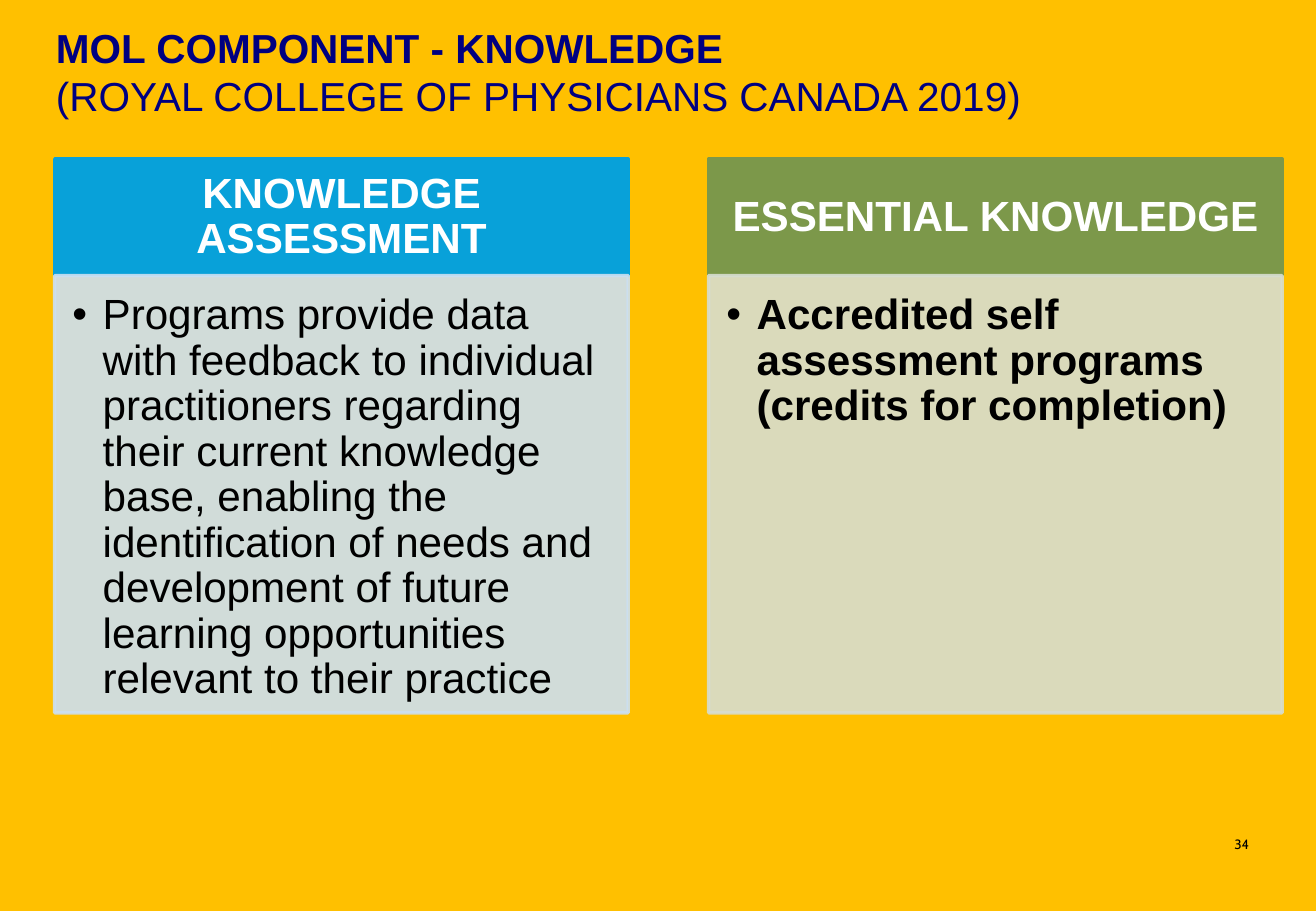
from dataclasses import dataclass

from lxml.etree import SubElement
from pptx import Presentation
from pptx.dml.color import RGBColor
from pptx.enum.shapes import MSO_SHAPE as Preset
from pptx.enum.text import MSO_ANCHOR as Anchor, MSO_AUTO_SIZE as AutoSize, PP_ALIGN as Align
from pptx.oxml.ns import qn
from pptx.util import Pt


@dataclass(frozen=True)
class Theme:
    """Colours, fonts and type sizes of the slide."""
    background: str = "FFC000"
    navy: str = "000080"
    blue: str = "08A1D9"
    pale_blue: str = "CCE0F1"
    green: str = "7C984A"
    pale_green: str = "D7DDD0"
    white: str = "FFFFFF"
    black: str = "000000"
    main_font: str = "Arial"
    number_font: str = "Cabin"
    title_size: float = 24
    panel_size: float = 25
    number_size: float = 8


THEME = Theme()


def add_run(paragraph, text, size, color, bold=False, font=THEME.main_font):
    """Append one formatted run."""
    run = paragraph.add_run()
    run.text = text
    run.font.name = font
    run.font.size = Pt(size)
    run.font.bold = bold
    run.font.color.rgb = RGBColor.from_string(color)


def set_frame(frame, insets, anchor):
    """Set wrapping, anchor and insets (left, top, right, bottom)."""
    frame.word_wrap = True
    frame.auto_size = AutoSize.NONE
    frame.vertical_anchor = anchor
    (frame.margin_left, frame.margin_top,
     frame.margin_right, frame.margin_bottom) = map(Pt, insets)


def add_block(slide, box, color, alpha=100):
    """Add a rectangle with matching fill and outline."""
    block = slide.shapes.add_shape(Preset.RECTANGLE, *map(Pt, box))
    block.shadow.inherit = False
    block.line.width = Pt(2)
    block.line.fill.solid()
    block.fill.solid()
    for fill in (block.fill, block.line.fill):
        fill.fore_color.rgb = RGBColor.from_string(color)
    if alpha < 100:
        for rgb in block._element.spPr.iter(qn("a:srgbClr")):
            SubElement(rgb, qn("a:alpha"), val=str(alpha * 1000))
    return block


def add_title(slide, box, heading, source):
    """Fill the title placeholder with a bold heading and its source."""
    title = slide.shapes.title
    title.left, title.top, title.width, title.height = map(Pt, box)
    set_frame(title.text_frame, (7.2, 5.3, 7.2, 3.6), Anchor.TOP)
    paragraph = title.text_frame.paragraphs[0]
    paragraph.alignment = Align.LEFT
    paragraph.line_spacing = Pt(28.5)
    add_run(paragraph, heading, THEME.title_size, THEME.navy, bold=True)
    paragraph.add_line_break()
    add_run(paragraph, source, THEME.title_size, THEME.navy)


def add_panel(slide, box, heading, detail, colors, bold_detail):
    """Add a coloured heading above a tinted block with one bullet."""
    left, top, width, height = box
    heading_height = 69.1
    head_color, body_color = colors

    head = add_block(slide, (left, top, width, heading_height), head_color)
    set_frame(head.text_frame, (14, 8, 14, 8), Anchor.MIDDLE)
    paragraph = head.text_frame.paragraphs[0]
    paragraph.alignment = Align.CENTER
    paragraph.line_spacing = 0.9
    add_run(paragraph, heading, THEME.panel_size, THEME.white, bold=True)

    body_box = (left, top + heading_height, width, height - heading_height)
    body = add_block(slide, body_box, body_color, alpha=90)
    set_frame(body.text_frame, (10.5, 10.5, 14, 16), Anchor.TOP)
    paragraph = body.text_frame.paragraphs[0]
    properties = paragraph._p.get_or_add_pPr()
    properties.set("marL", str(Pt(18)))
    properties.set("indent", str(Pt(-18)))
    SubElement(properties, qn("a:buFont"), typeface=THEME.main_font)
    SubElement(properties, qn("a:buChar"), char="•")
    paragraph.alignment = Align.LEFT
    paragraph.line_spacing = 0.9
    add_run(paragraph, detail, THEME.panel_size, THEME.black, bold_detail)


def add_page_number(slide, box, number):
    """Add the page number in an unfilled ellipse."""
    badge = slide.shapes.add_shape(Preset.OVAL, *map(Pt, box))
    badge.shadow.inherit = False
    badge.fill.background()
    badge.line.fill.background()
    set_frame(badge.text_frame, (7.2, 3.6, 7.2, 3.6), Anchor.TOP)
    paragraph = badge.text_frame.paragraphs[0]
    paragraph.alignment = Align.LEFT
    add_run(paragraph, number, THEME.number_size, THEME.black, font=THEME.number_font)


def main():
    """Build and save the slide."""
    deck = Presentation()
    deck.slide_width, deck.slide_height = Pt(780), Pt(540)
    slide = deck.slides.add_slide(deck.slide_layouts[5])
    slide.background.fill.solid()
    slide.background.fill.fore_color.rgb = RGBColor.from_string(THEME.background)

    add_title(slide, (25.9, 8.6, 641.5, 72.7), "MOL COMPONENT - KNOWLEDGE",
              "(ROYAL COLLEGE OF PHYSICIANS CANADA 2019)")
    panels = (
        ("KNOWLEDGE ASSESSMENT",
         "Programs provide data with feedback to individual practitioners regarding "
         "their current knowledge base, enabling the identification of needs and "
         "development of future learning opportunities relevant to their practice",
         (THEME.blue, THEME.pale_blue), False),
        ("ESSENTIAL KNOWLEDGE",
         "Accredited self assessment programs (credits for completion)",
         (THEME.green, THEME.pale_green), True),
    )
    panel_width, gap = 340, 47.6
    for index, panel in enumerate(panels):
        left = 32.4 + index * (panel_width + gap)
        add_panel(slide, (left, 94.3, panel_width, 328.3), *panel)
    add_page_number(slide, (716.4, 486, 55.4, 39.6), "34")

    deck.save("out.pptx")


if __name__ == "__main__":
    main()
